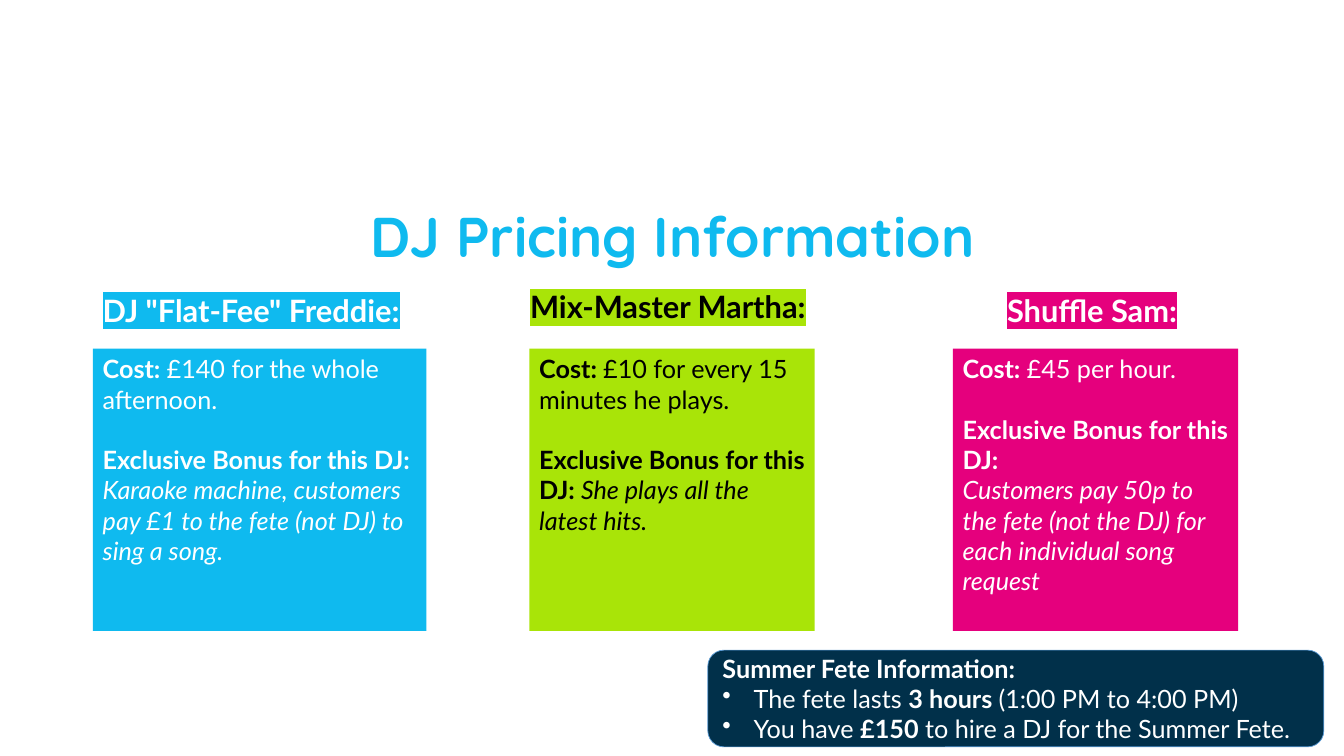
"""Build the DJ pricing information slide."""
from lxml import etree
from pptx import Presentation
from pptx.dml.color import RGBColor
from pptx.enum.shapes import MSO_SHAPE
from pptx.enum.text import MSO_ANCHOR, PP_ALIGN
from pptx.oxml.ns import qn
from pptx.util import Pt

RECT, ROUNDED = MSO_SHAPE.RECTANGLE, MSO_SHAPE.ROUNDED_RECTANGLE
TOP, MIDDLE = MSO_ANCHOR.TOP, MSO_ANCHOR.MIDDLE
LEFT, CENTER = PP_ALIGN.LEFT, PP_ALIGN.CENTER
PX = 9144
WHITE, BLACK = "FFFFFF", "000000"
BLUE, LIME, PINK, NAVY, EDGE = "0FBAEF", "A9E408", "E5007D", "01304A", "5B9BD5"
BODY_SIZE, LINE_GAP = 18, 21.6

BONUS = "Exclusive Bonus for this DJ:"
DJS = [
    {"name": 'DJ "Flat-Fee" Freddie:', "fill": BLUE, "ink": WHITE,
     "head": (92, 284, 323, 47), "card": (92, 346, 331, 280),
     "text": [[("Cost: ", "b"), ("£140 for the whole afternoon.", "")],
              [(BONUS, "b")],
              [("Karaoke machine, customers pay £1 to the fete (not DJ) to sing a song.", "i")]]},
    {"name": "Mix-Master Martha:", "fill": LIME, "ink": BLACK,
     "head": (516, 281, 302, 47), "card": (525, 346, 283, 280),
     "text": [[("Cost: ", "b"), ("£10 for every 15 minutes he plays.", "")],
              [(BONUS + " ", "b"), ("She plays all the latest hits.", "i")]]},
    {"name": "Shuffle Sam:", "fill": PINK, "ink": WHITE,
     "head": (989, 284, 194, 47), "card": (945, 346, 283, 280),
     "text": [[("Cost: ", "b"), ("£45 per hour.", "")],
              [(BONUS, "b")],
              [("Customers pay 50p to the fete (not the DJ) for each individual song request", "i")]]},
]
FETE = [
    [("Summer Fete Information:", "b")],
    [("The fete lasts ", ""), ("3 hours ", "b"), ("(1:00 PM to 4:00 PM)", "")],
    [("You have ", ""), ("£150", "b"), (" to hire a DJ for the Summer Fete.", "")],
]


def rgb(value):
    """Turn a hex string into a colour."""
    return RGBColor.from_string(value)


def px(*lengths):
    """Turn pixel lengths into EMU."""
    return [n * PX for n in lengths]


def style(r, size, color, bold=False, italic=False, font="Lato"):
    """Format one run."""
    r.font.size, r.font.bold, r.font.italic = Pt(size), bold, italic
    r.font.color.rgb = rgb(color)
    r.font.name = font


def highlight(r, color):
    """Put a highlight colour behind a run."""
    mark = etree.Element(qn("a:highlight"))
    etree.SubElement(mark, qn("a:srgbClr")).set("val", color)
    r.font.fill  
    r._r.rPr.find(qn("a:solidFill")).addnext(mark)


def bullet(p, indent):
    """Give a paragraph a hanging round bullet."""
    pPr = p._p.get_or_add_pPr()
    pPr.set("marL", str(indent * PX))
    pPr.set("indent", str(-indent * PX))
    etree.SubElement(pPr, qn("a:buChar")).set("char", "•")


def fill_text(tf, paragraphs, color):
    """Write paragraphs of styled runs and return them."""
    tf.word_wrap = True
    for i, parts in enumerate(paragraphs):
        p = tf.add_paragraph() if i else tf.paragraphs[0]
        p.alignment = LEFT
        for text, look in parts:
            r = p.add_run()
            r.text = text
            style(r, BODY_SIZE, color, look == "b", look == "i")
    return tf.paragraphs


def add_panel(s, kind, box, fill, anchor):
    """Add a filled panel without outline or shadow."""
    sp = s.shapes.add_shape(kind, *px(*box))
    sp.shadow.inherit = False
    sp.fill.solid()
    sp.fill.fore_color.rgb = rgb(fill)
    sp.line.fill.background()
    sp.text_frame.vertical_anchor = anchor
    return sp


def add_title(s, box, text):
    """Place and format the slide title."""
    sp = s.shapes.title
    sp.left, sp.top, sp.width, sp.height = px(*box)
    tf = sp.text_frame
    tf.text = text
    tf.vertical_anchor = MIDDLE
    p = tf.paragraphs[0]
    p.alignment, p.line_spacing = CENTER, 0.9
    style(p.runs[0], 40, BLUE, bold=True, font="Quicksand")


def add_heading(s, box, text, fill, ink):
    """Add a highlighted DJ name."""
    tf = s.shapes.add_textbox(*px(*box)).text_frame
    tf.word_wrap = True
    tf.text = text
    r = tf.paragraphs[0].runs[0]
    style(r, 22, ink, bold=True)
    highlight(r, fill)


def add_card(s, box, paragraphs, fill, ink):
    """Add a card with the cost and the bonus of a DJ."""
    sp = add_panel(s, RECT, box, fill, TOP)
    fill_text(sp.text_frame, paragraphs, ink)[1].space_before = Pt(LINE_GAP)


def add_fete(s, box, paragraphs):
    """Add the rounded panel with the fete details."""
    sp = add_panel(s, ROUNDED, box, NAVY, MIDDLE)
    sp.line.color.rgb = rgb(EDGE)
    sp.line.width = Pt(0.5)
    for p in fill_text(sp.text_frame, paragraphs, WHITE)[1:]:
        bullet(p, 31)


def main():
    """Build and save the slide."""
    prs = Presentation()
    prs.slide_width, prs.slide_height = px(1333, 750)
    s = prs.slides.add_slide(prs.slide_layouts[5])
    add_title(s, (92, 205, 1150, 65), "DJ Pricing Information")
    for dj in DJS:
        add_card(s, dj["card"], dj["text"], dj["fill"], dj["ink"])
        add_heading(s, dj["head"], dj["name"], dj["fill"], dj["ink"])
    add_fete(s, (702, 645, 611, 96), FETE)
    prs.save("out.pptx")


if __name__ == "__main__":
    main()
